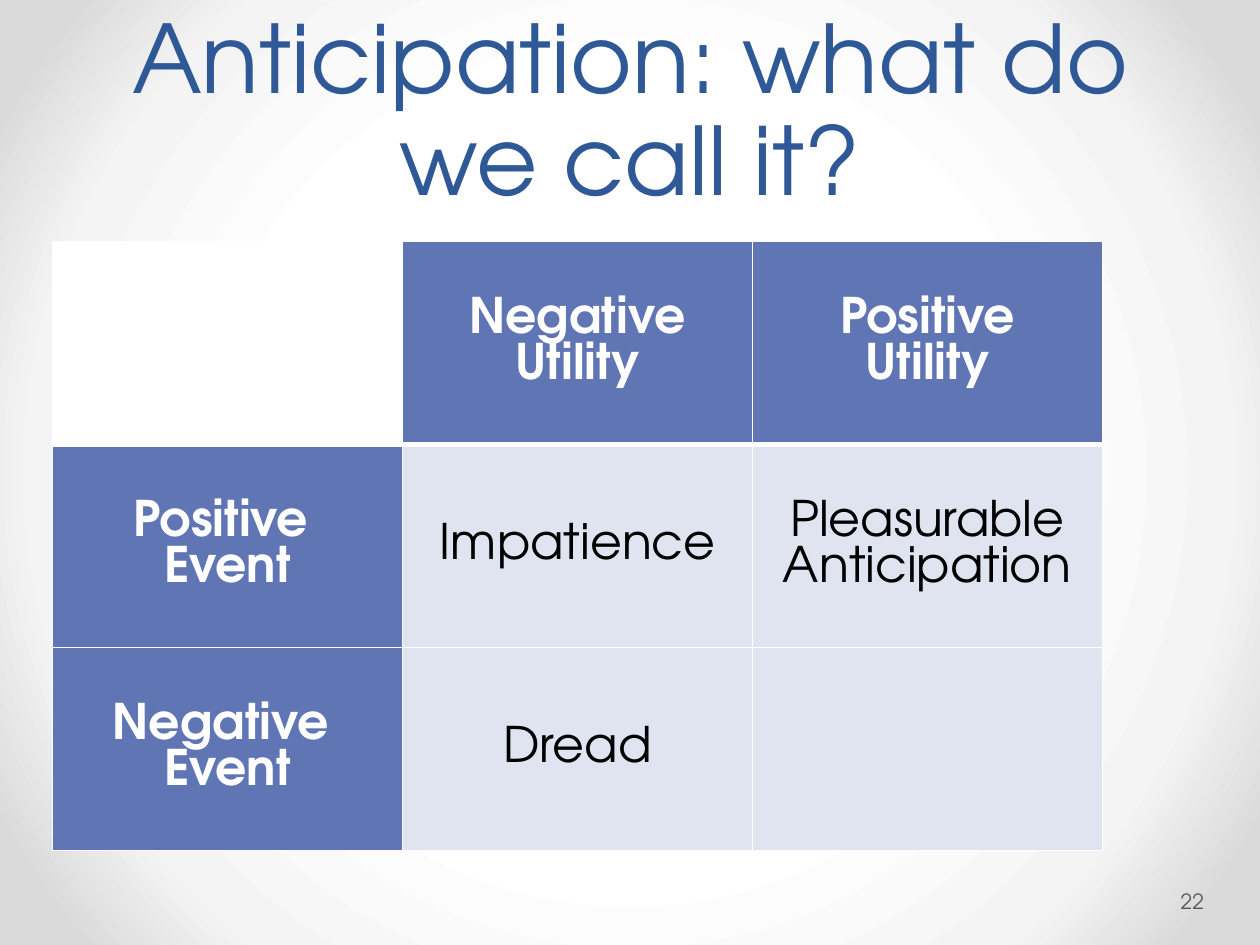
import pptx
import pptx.util
import pptx.dml.color
import pptx.enum.text
import pptx.oxml

Pt = pptx.util.Pt
RGB = pptx.dml.color.RGBColor
ALIGN = pptx.enum.text.PP_ALIGN
ANCHOR = pptx.enum.text.MSO_ANCHOR
FIT = pptx.enum.text.MSO_AUTO_SIZE

FONT = "TeX Gyre Adventor"
NAVY = RGB(0x2F, 0x58, 0x97)
BLUE = RGB(0x60, 0x76, 0xB4)
PALE = RGB(0xDF, 0xE4, 0xF0)
GREY = RGB(0x59, 0x59, 0x59)
WHITE = RGB(0xFF, 0xFF, 0xFF)
BLACK = RGB(0, 0, 0)
GLOW = [(50, WHITE), (76, RGB(0xF4, 0xF4, 0xF4)), (92, RGB(0xDA, 0xDA, 0xDA))]

NS = 'xmlns:a="http://schemas.openxmlformats.org/drawingml/2006/main"'
ROWS = [
    ["", "Negative\nUtility", "Positive\nUtility"],
    ["Positive \nEvent", "Impatience", "Pleasurable Anticipation"],
    ["Negative \nEvent", "Dread", ""],
]


def add_run(para, text, size, color, bold=False):
    run = para.add_run()
    run.text = text
    font = run.font
    font.name, font.size, font.bold = FONT, Pt(size), bold
    font.color.rgb = color


def paint_back(slide):
    """Fill the background with a round glow."""
    fill = slide.background.fill
    fill.gradient()
    grad = slide.background._cSld.bg.bgPr.find(".//{*}gradFill")
    for part in list(grad):
        grad.remove(part)
    stops = "".join(
        f'<a:gs pos="{pos * 1000}"><a:srgbClr val="{color}"/></a:gs>'
        for pos, color in GLOW)
    grad.append(pptx.oxml.parse_xml(f"<a:gsLst {NS}>{stops}</a:gsLst>"))
    grad.append(pptx.oxml.parse_xml(
        f'<a:path {NS} path="circle">'
        '<a:fillToRect l="50000" t="50000" r="50000" b="50000"/></a:path>'))


def set_title(slide, left, top, width, height):
    title = slide.shapes.title
    title.left, title.top = Pt(left), Pt(top)
    title.width, title.height = Pt(width), Pt(height)
    frame = title.text_frame
    frame.auto_size = FIT.NONE
    frame.word_wrap = True
    frame.vertical_anchor = ANCHOR.BOTTOM
    para = frame.paragraphs[0]
    para.alignment = ALIGN.CENTER
    para.line_spacing = Pt(58)
    add_run(para, "Anticipation: what do we call it?", 54, NAVY)


def add_number(slide, left, top, width, height):
    box = slide.shapes.add_textbox(Pt(left), Pt(top), Pt(width), Pt(height))
    frame = box.text_frame
    frame.word_wrap = True
    frame.vertical_anchor = ANCHOR.MIDDLE
    frame.margin_left = Pt(2.2)
    frame.margin_right = frame.margin_top = frame.margin_bottom = Pt(3.6)
    add_run(frame.paragraphs[0], "22", 12, GREY)


def set_edges(cell, widths):
    """Draw white edges, with widths in the order left, right, top, bottom."""
    props = cell._tc.get_or_add_tcPr()
    for spot, (side, width) in enumerate(zip("LRTB", widths)):
        props.insert(spot, pptx.oxml.parse_xml(
            f'<a:ln{side} {NS} w="{Pt(width)}"><a:solidFill>'
            f'<a:srgbClr val="{WHITE}"/></a:solidFill></a:ln{side}>'))


def fill_cell(cell, text, row, col):
    head = row == 0 or col == 0
    cell.fill.solid()
    cell.fill.fore_color.rgb = (
        WHITE if row == col == 0 else BLUE if head else PALE)
    cell.vertical_anchor = ANCHOR.MIDDLE
    set_edges(cell, [1, 1, 3 if row == 1 else 1, 3 if row == 0 else 1])
    para = cell.text_frame.paragraphs[0]
    para.alignment = ALIGN.CENTER
    for spot, line in enumerate(text.split("\n") if text else []):
        if spot:
            para.add_line_break()
        add_run(para, line, 28, WHITE if head else BLACK, head)


def add_grid(slide, left, top, width, height):
    table = slide.shapes.add_table(
        len(ROWS), len(ROWS[0]),
        Pt(left), Pt(top), Pt(width), Pt(height)).table
    for row, texts in enumerate(ROWS):
        for col, text in enumerate(texts):
            fill_cell(table.cell(row, col), text, row, col)


def main():
    deck = pptx.Presentation()
    deck.slide_width, deck.slide_height = Pt(720), Pt(540)
    slide = deck.slides.add_slide(deck.slide_layouts[5])
    paint_back(slide)
    set_title(slide, 36, 0, 648, 126)
    add_number(slide, 672.5, 500.5, 44, 29)
    add_grid(slide, 30, 138, 600, 348)
    deck.save("out.pptx")


if __name__ == "__main__":
    main()
